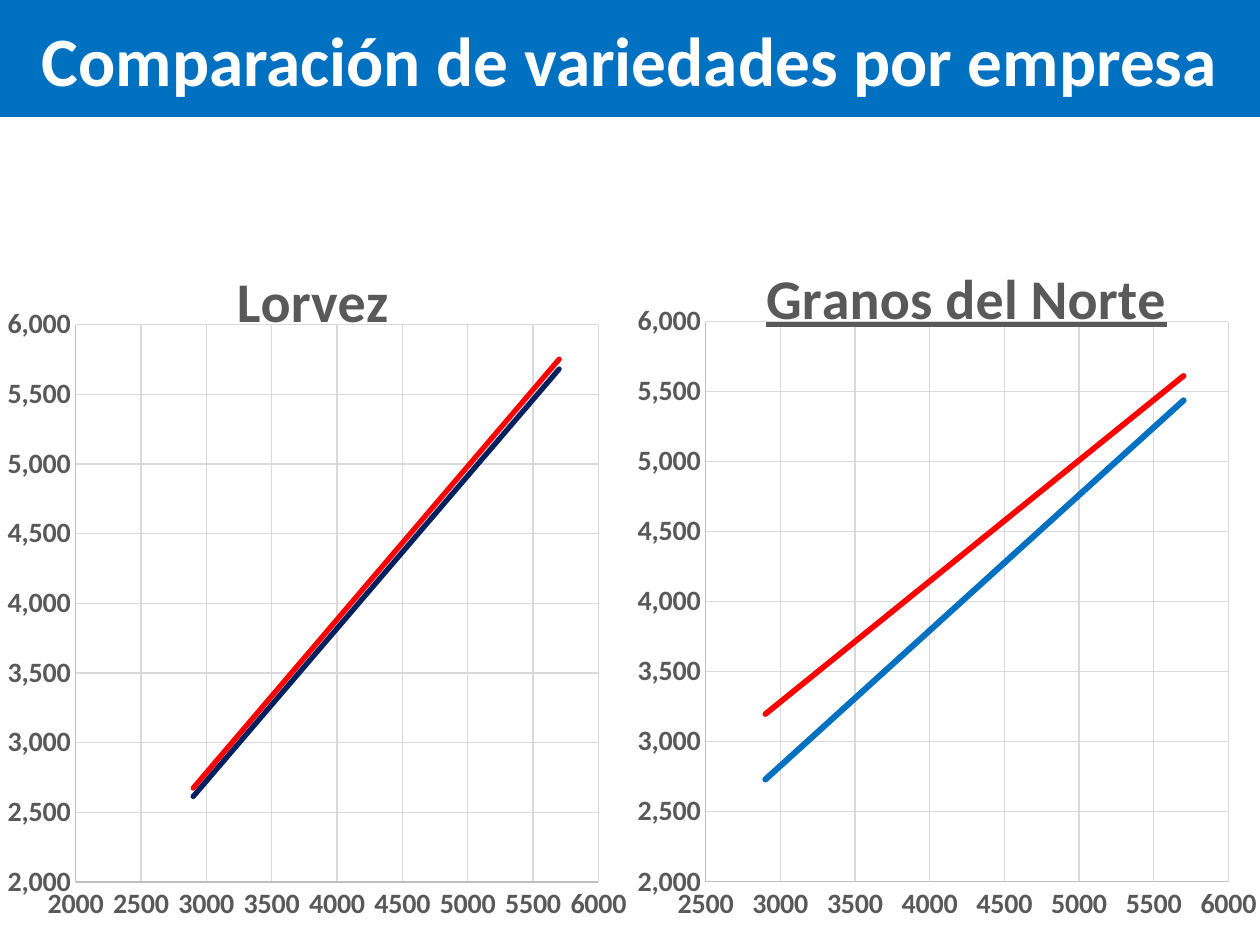
from lxml import etree
from pptx import Presentation
from pptx.chart.data import XyChartData
from pptx.dml.color import RGBColor
from pptx.enum.chart import XL_CHART_TYPE, XL_MARKER_STYLE, XL_TICK_MARK
from pptx.enum.shapes import MSO_SHAPE
from pptx.enum.text import MSO_ANCHOR, PP_ALIGN
from pptx.oxml import parse_xml
from pptx.oxml.ns import nsdecls, qn
from pptx.util import Cm, Pt

FONT = "Calibri"
BLUE, NAVY, RED = "0070C0", "002060", "FF0000"
WHITE, GREY, AXIS_GREY, GRID_GREY = "FFFFFF", "595959", "BFBFBF", "D9D9D9"

SITE_MEANS = [4400, 5600, 5500, 4600, 4500, 4400, 4400, 5700, 4500, 4600, 3900, 2900]

# Each variety: yields by site, trend line colour, trend line width
NORTH_VARIETIES = [
    ([4500, 5600, 4600, 4300, 3600, 4900, 4200, 5600, 4400, 4700, 3100, 2800], BLUE, 3.5),
    ([4300, 4500, 5800, 5300, 5300, 3700, 4400, 5800, 4800, 4900, 4000, 3000], RED, 3.25),
]
SOUTH_VARIETIES = [
    ([4400, 4900, 6000, 3800, 4600, 4800, 4200, 6000, 4100, 4300, 3800, 2600], NAVY, 3),
    ([2300, 5800, 6000, 5000, 5200, 4300, 4400, 5600, 4200, 4300, 4300, 2900], RED, 3),
]


def rgb(value):
    return RGBColor.from_string(value)


def style_font(font, size, color):
    font.name, font.size, font.bold = FONT, Pt(size), True
    font.color.rgb = rgb(color)


def set_layout(parent, after, inner=False, **fractions):
    """Fix a chart part's place, as fractions of the chart, after the given child."""
    for old in parent.findall(qn("c:layout")):
        parent.remove(old)
    layout = etree.Element(qn("c:layout"))
    manual = etree.SubElement(layout, qn("c:manualLayout"))
    settings = {"layoutTarget": "inner"} if inner else {}
    settings.update(xMode="edge", yMode="edge", **fractions)
    for tag, value in settings.items():
        etree.SubElement(manual, qn(f"c:{tag}")).set("val", str(value))
    parent.insert(after, layout)


def add_trend(series, color, width):
    trend = parse_xml(
        f'<c:trendline {nsdecls("c", "a")}><c:spPr>'
        f'<a:ln w="{Pt(width)}" cap="rnd"><a:solidFill><a:srgbClr val="{color}"/></a:solidFill></a:ln>'
        '</c:spPr><c:trendlineType val="linear"/>'
        '<c:dispRSqr val="0"/><c:dispEq val="0"/></c:trendline>'
    )
    series._element.find(qn("c:xVal")).addprevious(trend)


def style_axis(axis, minimum, number_format):
    axis.minimum_scale, axis.maximum_scale, axis.major_unit = minimum, 6000, 500
    axis.major_tick_mark = axis.minor_tick_mark = XL_TICK_MARK.NONE
    axis.tick_labels.number_format = number_format
    axis.tick_labels.number_format_is_linked = False
    style_font(axis.tick_labels.font, 16, GREY)
    axis.has_major_gridlines = True
    for line, color in ((axis.format.line, AXIS_GREY),
                        (axis.major_gridlines.format.line, GRID_GREY)):
        line.color.rgb, line.width = rgb(color), Pt(0.75)


def add_header(slide, left, top, width, height):
    header = slide.shapes.add_shape(MSO_SHAPE.RECTANGLE, left, top, width, height)
    header.shadow.inherit = False
    header.fill.solid()
    header.fill.fore_color.rgb = rgb(BLUE)
    header.line.fill.background()
    frame = header.text_frame
    frame.text = "Comparación de variedades por empresa"
    frame.vertical_anchor = MSO_ANCHOR.MIDDLE
    frame.paragraphs[0].alignment = PP_ALIGN.CENTER
    style_font(frame.paragraphs[0].runs[0].font, 39.6, WHITE)


def add_comparison(slide, box, company, title_x, varieties, x_minimum, underline=False):
    """Plot the varieties' trend lines; the points themselves stay unmarked."""
    data = XyChartData()
    for number, (yields, _, _) in enumerate(varieties, 1):
        points = data.add_series(f"Series {number}")
        for mean, value in zip(SITE_MEANS, yields):
            points.add_data_point(mean, value)
    chart = slide.shapes.add_chart(XL_CHART_TYPE.XY_SCATTER, *box, data).chart
    chart.font.name, chart.font.size = FONT, Pt(10)
    chart.has_legend = False
    chart.plots[0].vary_by_categories = False

    for series, (_, color, width) in zip(chart.plots[0].series, varieties):
        series.marker.style = XL_MARKER_STYLE.NONE
        series.format.line.fill.background()
        add_trend(series, color, width)

    style_axis(chart.category_axis, x_minimum, "General")
    style_axis(chart.value_axis, 2000, "#,##0")

    chart.has_title = True
    title = chart.chart_title
    title.text_frame.text = company
    title_font = title.text_frame.paragraphs[0].runs[0].font
    style_font(title_font, 32, GREY)
    title_font.underline = underline
    title.include_in_layout = False
    set_layout(title._element, 1, x=title_x, y=0.05)
    plot_area = chart._chartSpace.chart.plotArea
    set_layout(plot_area, 0, inner=True, x=0.12, y=0.15, w=0.83, h=0.764)


def main():
    presentation = Presentation()
    presentation.slide_width, presentation.slide_height = Cm(25.4), Cm(19.05)
    slide = presentation.slides.add_slide(presentation.slide_layouts[6])
    half = Cm(12.7)
    add_header(slide, 0, 0, presentation.slide_width, Cm(2.36))
    add_comparison(slide, (half, Cm(4.27), half, Cm(14.78)), "Granos del Norte", 0.2,
                   NORTH_VARIETIES, 2500, underline=True)
    add_comparison(slide, (0, Cm(4.34), half, Cm(14.71)), "Lorvez", 0.36,
                   SOUTH_VARIETIES, 2000)
    presentation.save("out.pptx")


if __name__ == "__main__":
    main()
